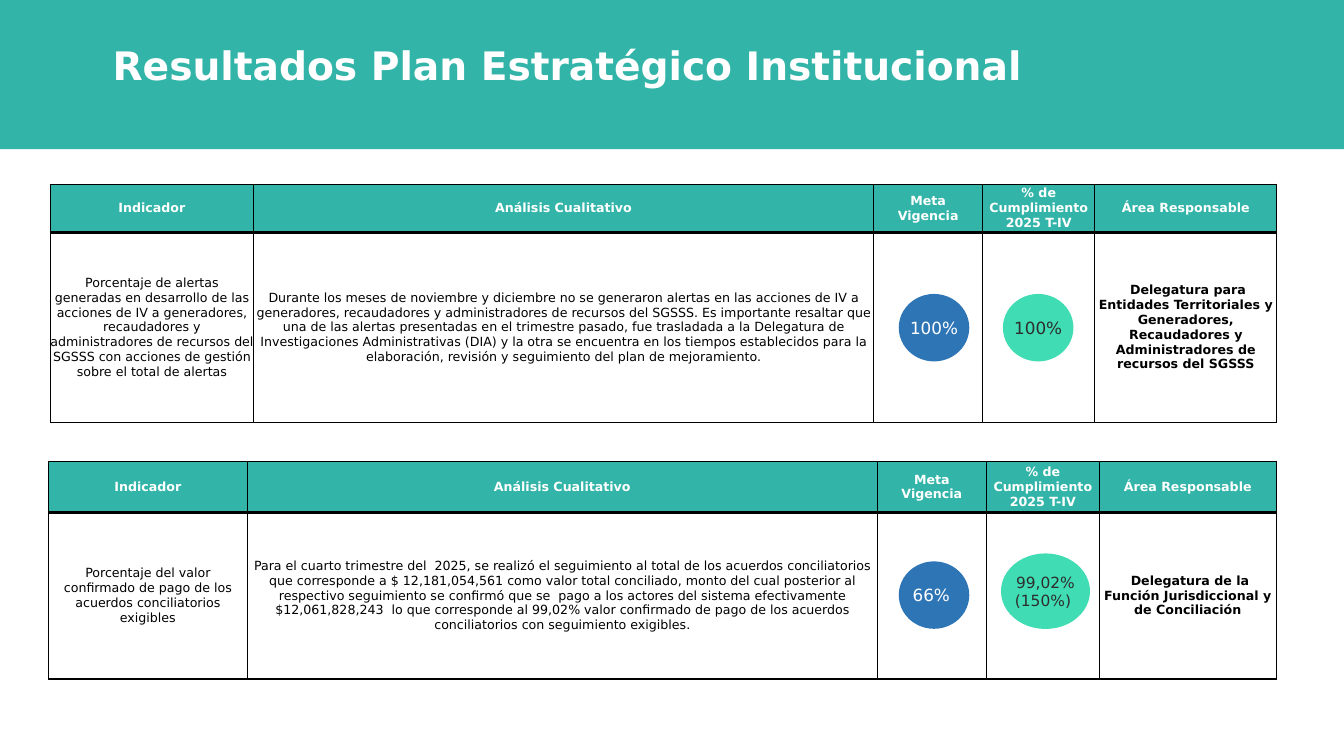
import pptx
import pptx.dml.color
import pptx.enum.shapes
import pptx.enum.text
import pptx.util
from lxml import etree

Pt = pptx.util.Pt
RGBColor = pptx.dml.color.RGBColor
ALIGN = pptx.enum.text.PP_ALIGN
MIDDLE = pptx.enum.text.MSO_ANCHOR.MIDDLE
PRESET = pptx.enum.shapes.MSO_SHAPE

TEAL = RGBColor(0x32, 0xB4, 0xA8)
MINT = RGBColor(0x40, 0xDC, 0xB3)
BLUE = RGBColor(0x2E, 0x75, 0xB6)
WHITE = RGBColor(0xFF, 0xFF, 0xFF)
BLACK = RGBColor(0x00, 0x00, 0x00)
CHARCOAL = RGBColor(0x2D, 0x2D, 0x2D)
FONT = "DejaVu Sans"
DRAWING = "http://schemas.openxmlformats.org/drawingml/2006/main"

HEADERS = ["Indicador", "Análisis Cualitativo", "Meta\nVigencia",
           "% de Cumplimiento 2025 T-IV", "Área Responsable"]
TABLES = [
    dict(left=36, top=131.6, columns=[145, 443, 78, 80, 130], rows=[34.4, 136],
         body=["Porcentaje de alertas generadas en desarrollo de las acciones de IV a "
               "generadores, recaudadores y administradores de recursos del SGSSS con "
               "acciones de gestión sobre el total de alertas",
               "Durante los meses de noviembre y diciembre no se generaron alertas en las "
               "acciones de IV a generadores, recaudadores y administradores de recursos del "
               "SGSSS. Es importante resaltar que una de las alertas presentadas en el "
               "trimestre pasado, fue trasladada a la Delegatura de Investigaciones "
               "Administrativas (DIA) y la otra se encuentra en los tiempos establecidos para "
               "la elaboración, revisión y seguimiento del plan de mejoramiento.",
               "", "",
               " Delegatura para Entidades Territoriales y Generadores, Recaudadores y "
               "Administradores de recursos del SGSSS"]),
    dict(left=34.6, top=329.8, columns=[142, 450, 78, 80.6, 126.4], rows=[36.2, 119],
         body=["Porcentaje del valor confirmado de pago de los acuerdos conciliatorios exigibles",
               "Para el cuarto trimestre del  2025, se realizó el seguimiento al total de los "
               "acuerdos conciliatorios que corresponde a $ 12,181,054,561 como valor total "
               "conciliado, monto del cual posterior al respectivo seguimiento se confirmó que "
               "se  pago a los actores del sistema efectivamente $12,061,828,243  lo que "
               "corresponde al 99,02% valor confirmado de pago de los acuerdos conciliatorios "
               "con seguimiento exigibles.",
               "", "",
               " Delegatura de la Función Jurisdiccional y de Conciliación"]),
]
# left, top, width, height, text, size, fill, text colour
INDICATORS = [
    (642, 210, 50.4, 48.2, "100%", 12, BLUE, WHITE),
    (716.4, 210, 50.4, 48.2, "100%", 12, MINT, CHARCOAL),
    (642, 401, 50.4, 48.2, "66% ", 12, BLUE, WHITE),
    (715, 395.3, 63.6, 54, "99,02%\n(150%) ", 11, MINT, CHARCOAL),
]


def write_text(text_frame, text, size, color, bold=False):
    text_frame.text = text
    for paragraph in text_frame.paragraphs:
        paragraph.alignment = ALIGN.CENTER
        for run in paragraph.runs:
            run.font.name = FONT
            run.font.size = Pt(size)
            run.font.bold = bold
            run.font.color.rgb = color


def add_plain_shape(preset, left, top, width, height, color):
    shape = slide.shapes.add_shape(preset, Pt(left), Pt(top), Pt(width), Pt(height))
    shape.shadow.inherit = False
    shape.fill.solid()
    shape.fill.fore_color.rgb = color
    shape.line.fill.background()
    return shape


presentation = pptx.Presentation()
presentation.slide_width = Pt(960)
presentation.slide_height = Pt(540)
slide = presentation.slides.add_slide(presentation.slide_layouts[6])

# Title band
add_plain_shape(PRESET.RECTANGLE, 0, 0, 960, 106.6, TEAL)
title = slide.shapes.add_textbox(Pt(72), Pt(26), Pt(666), Pt(41))
title.text_frame.word_wrap = True
write_text(title.text_frame, "Resultados Plan Estratégico Institucional", 28, WHITE, True)

# Result tables
for data in TABLES:
    columns, rows = data["columns"], data["rows"]
    table = slide.shapes.add_table(2, len(columns), Pt(data["left"]), Pt(data["top"]),
                                   Pt(sum(columns)), Pt(sum(rows))).table
    for column, width in zip(table.columns, columns):
        column.width = Pt(width)
    for row_index, texts in enumerate([HEADERS, data["body"]]):
        is_header = row_index == 0
        table.rows[row_index].height = Pt(rows[row_index])
        for column_index, text in enumerate(texts):
            cell = table.cell(row_index, column_index)
            cell.margin_left = cell.margin_right = cell.margin_top = cell.margin_bottom = 0
            cell.vertical_anchor = MIDDLE
            is_area = column_index == len(columns) - 1
            write_text(cell.text_frame, text, 9, WHITE if is_header else BLACK,
                       is_header or is_area)
            # Thin borders, with a thick rule below the header
            thick_side = "lnB" if is_header else "lnT"
            for side in ["lnL", "lnR", "lnT", "lnB"]:
                border = etree.SubElement(cell._tc.get_or_add_tcPr(), f"{{{DRAWING}}}{side}",
                                          w=str(Pt(2 if side == thick_side else 1)))
                fill = etree.SubElement(border, f"{{{DRAWING}}}solidFill")
                etree.SubElement(fill, f"{{{DRAWING}}}srgbClr", val=str(BLACK))
            if is_header:
                cell.fill.solid()
                cell.fill.fore_color.rgb = TEAL
            else:
                cell.fill.background()

# Indicator circles
for left, top, width, height, text, size, fill_color, text_color in INDICATORS:
    circle = add_plain_shape(PRESET.OVAL, left, top, width, height, fill_color)
    text_frame = circle.text_frame
    text_frame.margin_left = text_frame.margin_right = 0
    text_frame.margin_top = text_frame.margin_bottom = 0
    text_frame.vertical_anchor = MIDDLE
    text_frame.word_wrap = False
    write_text(text_frame, text, size, text_color)

presentation.save("out.pptx")
